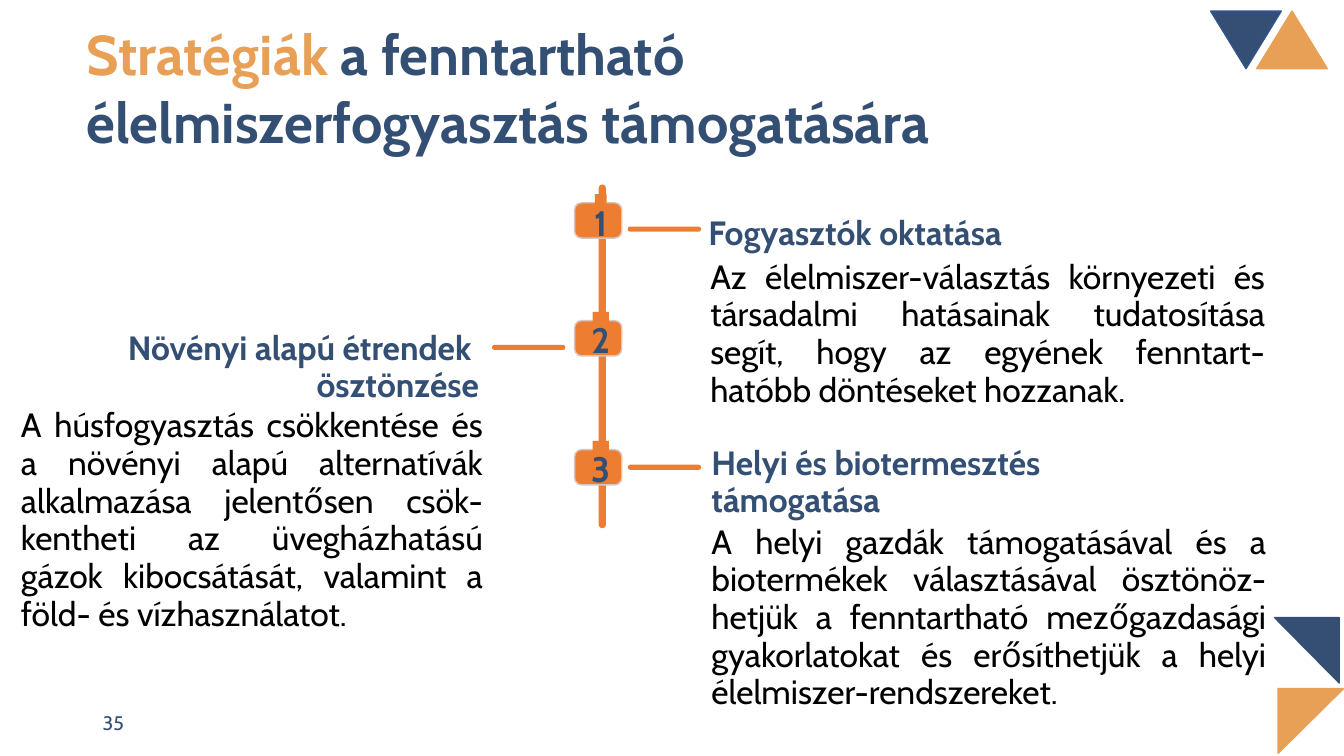
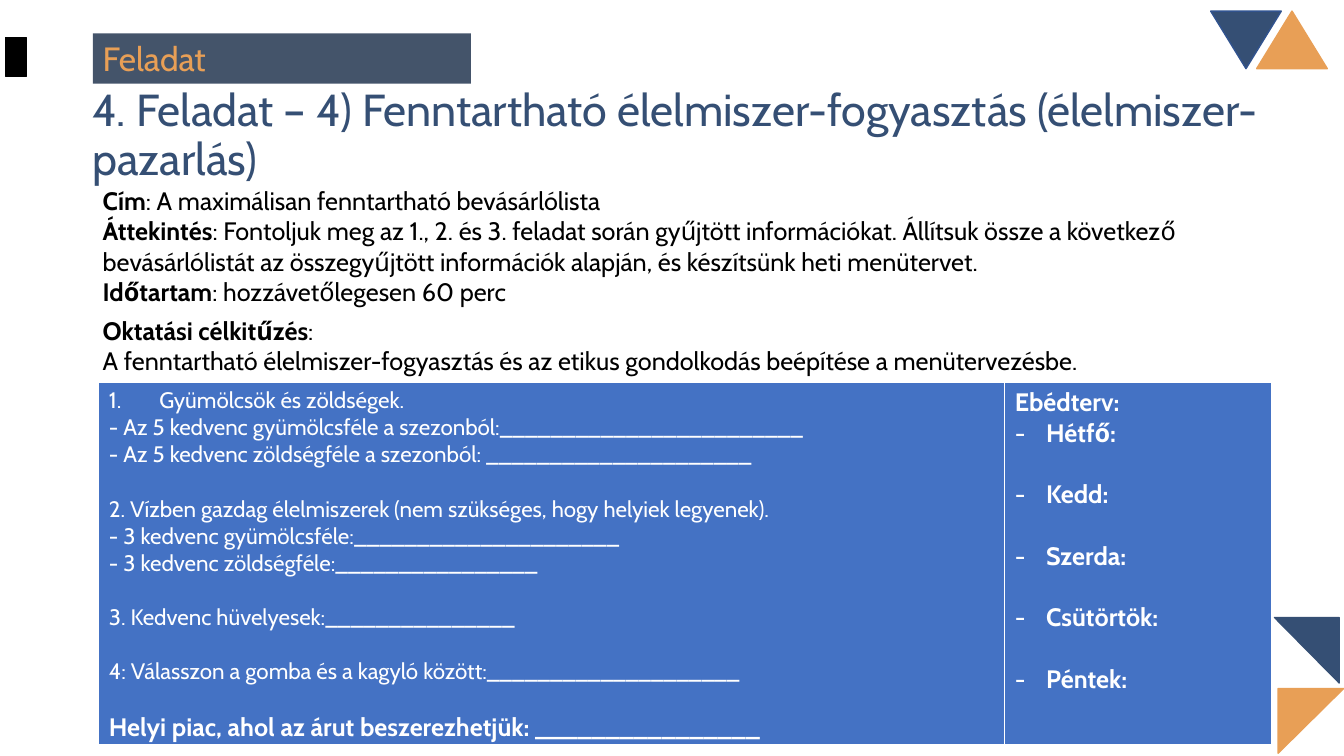
from dataclasses import dataclass

from lxml.etree import SubElement
from pptx import Presentation
from pptx.dml.color import RGBColor as RGB
from pptx.enum.shapes import MSO_SHAPE as Preset
from pptx.enum.text import MSO_ANCHOR as Anchor, PP_ALIGN as Align
from pptx.oxml.ns import qn
from pptx.util import Cm, Pt


@dataclass(frozen=True)
class Theme:
    font: str = "Cabin"
    navy: str = "354F74"
    ink: str = "344F74"
    edge: str = "31538F"
    amber: str = "E89F56"
    orange: str = "ED7D31"
    rim: str = "D7C5C1"
    slate: str = "44546A"
    blue: str = "4472C4"
    black: str = "000000"
    white: str = "FFFFFF"
    headline: float = 40
    task_title: float = 32
    badge: float = 25.2
    body: float = 24
    detail: float = 18
    entry: float = 16
    page: float = 14


theme = Theme()


def block(slide, preset, box, fill, line=None, width=1):
    shape = slide.shapes.add_shape(preset, *map(Cm, box))
    shape.shadow.inherit = False
    shape.fill.solid()
    shape.fill.fore_color.rgb = RGB.from_string(fill)
    if line:
        shape.line.color.rgb = RGB.from_string(line)
        shape.line.width = Pt(width)
    else:
        shape.line.fill.background()
    return shape


def write(frame, paragraphs, size, color, align=Align.LEFT, pitch=None,
          wrap=True, anchor=Anchor.TOP):
    frame.word_wrap = wrap
    frame.vertical_anchor = anchor
    for index, runs in enumerate(paragraphs):
        paragraph = frame.add_paragraph() if index else frame.paragraphs[0]
        paragraph.alignment = align
        paragraph.line_spacing = pitch
        for text, bold, *accent in runs:
            run = paragraph.add_run()
            run.text = text
            run.font.name = theme.font
            run.font.size = Pt(size)
            run.font.bold = bold
            run.font.color.rgb = RGB.from_string(accent[0] if accent else color)


deck = Presentation()
deck.slide_width, deck.slide_height = Cm(33.87), Cm(19.05)
blank = deck.slide_layouts[6]
strategies = deck.slides.add_slide(blank)
task = deck.slides.add_slide(blank)

corner_triangles = [
    ((31.67, 0.28, 1.78, 1.45), 0, 0.5, theme.amber, theme.amber),
    ((32.21, 17.35, 1.65, 1.63), 180, 1, theme.amber, theme.amber),
    ((32.11, 15.57, 1.65, 1.63), 270, 1, theme.navy, theme.navy),
    ((30.51, 0.28, 1.78, 1.45), 180, 0.5, theme.navy, theme.edge),
]
for slide in (strategies, task):
    for box, turn, apex, fill, line in corner_triangles:
        triangle = block(slide, Preset.ISOSCELES_TRIANGLE, box, fill, line)
        triangle.rotation = turn
        triangle.adjustments[0] = apex

page = strategies.shapes.add_textbox(Cm(2.34), Cm(17.7), Cm(7.62), Cm(1.02))
write(page.text_frame, [[("35", False)]], theme.page, theme.navy,
      anchor=Anchor.MIDDLE)

headline = strategies.shapes.add_textbox(Cm(1.93), Cm(0.38), Cm(27.23), Cm(2.46))
write(headline.text_frame, [[
    ("Stratégiák ", True, theme.amber),
    ("a fenntartható élelmiszerfogyasztás támogatására", True),
]], theme.headline, theme.ink)

spine = block(strategies, Preset.ROUNDED_RECTANGLE, (15.09, 4.65, 0.18, 8.66),
              theme.orange)
spine.adjustments[0] = 0.5

milestones = [
    (5.11, 0.3, (15.82, 5.71),
     ["Fogyasztók oktatása"], (17.6, 5.31, 10.13, 1.04), Align.LEFT, False,
     "Az élelmiszer-választás környezeti és társadalmi hatásainak tudatosítása "
     "segít, hogy az egyének fenntart-hatóbb döntéseket hozzanak.",
     (17.65, 6.38, 14.48, 2.51)),
    (8.08, 0.41, (12.4, 8.69),
     ["Növényi alapú étrendek ", "ösztönzése"], (2.69, 8.2, 9.63, 1.32),
     Align.RIGHT, False,
     "A húsfogyasztás csökkentése és a növényi alapú alternatívák alkalmazása "
     "jelentősen csök-kentheti az üvegházhatású gázok kibocsátását, valamint a "
     "föld- és vízhasználatot.",
     (0.28, 10.13, 12.14, 3.15)),
    (11.33, 0.41, (15.82, 11.71),
     ["Helyi és biotermesztés támogatása"], (17.68, 11.1, 12.65, 1.24),
     Align.LEFT, True,
     "A helyi gazdák támogatásával és a biotermékek választásával ösztönöz-hetjük "
     "a fenntartható mezőgazdasági gyakorlatokat és erősíthetjük a helyi "
     "élelmiszer-rendszereket.",
     (17.68, 13.06, 14.48, 3.15)),
]
for number, (top, digit_width, branch_start, heading, heading_box, side, wraps,
             advice, advice_box) in enumerate(milestones, 1):
    branch = block(strategies, Preset.ROUNDED_RECTANGLE,
                   (*branch_start, 1.85, 0.13), theme.orange)
    branch.adjustments[0] = 0.5
    badge = block(strategies, Preset.ROUNDED_RECTANGLE, (14.48, top, 1.19, 0.89),
                  theme.orange, theme.rim, 1.05)
    badge.adjustments[0] = 0.2
    digit = block(strategies, Preset.RECTANGLE,
                  (15.14 - digit_width / 2, top - 0.22, digit_width, 0.74),
                  theme.orange)
    write(digit.text_frame, [[(str(number), True)]], theme.badge, theme.ink,
          Align.CENTER, Pt(31.5), False)
    strategy_name = strategies.shapes.add_textbox(*map(Cm, heading_box))
    write(strategy_name.text_frame, [[(line, True)] for line in heading],
          theme.body, theme.ink, side, Pt(26.3), wraps)
    explanation = strategies.shapes.add_textbox(*map(Cm, advice_box))
    write(explanation.text_frame, [[(advice, False)]], theme.body, theme.black,
          Align.JUSTIFY, Pt(26.9))

block(task, Preset.RECTANGLE, (0.15, 0.94, 0.51, 0.99), theme.black, theme.black, 0.75)

summary = task.shapes.add_textbox(Cm(2.34), Cm(4.55), Cm(29.72), Cm(5.08))
write(summary.text_frame, [
    [("Cím", True), (": A maximálisan fenntartható bevásárlólista", False)],
    [("Áttekintés", True),
     (": Fontoljuk meg az 1., 2. és 3. feladat során gyűjtött információkat. "
      "Állítsuk össze a következő bevásárlólistát az összegyűjtött információk "
      "alapján, és készítsünk heti menütervet.", False)],
    [("Időtartam", True), (": hozzávetőlegesen 60 perc", False)],
    [("Oktatási célkitűzés", True), (":", False)],
    [("A fenntartható élelmiszer-fogyasztás és az etikus gondolkodás beépítése a "
      "menütervezésbe.", False)],
], theme.detail, theme.black)
summary.text_frame.paragraphs[3].space_before = Pt(6)

task_title = task.shapes.add_textbox(Cm(2.08), Cm(2.11), Cm(30.48), Cm(2.67))
write(task_title.text_frame, [[
    ("4. Feladat – 4) Fenntartható élelmiszer-fogyasztás (élelmiszer-pazarlás)", False),
]], theme.task_title, theme.navy, pitch=0.9, anchor=Anchor.BOTTOM)

label = block(task, Preset.RECTANGLE, (2.34, 0.84, 9.53, 1.27), theme.slate)
write(label.text_frame, [[("Feladat", False)]], theme.body, theme.amber)

planner = task.shapes.add_table(
    1, 2, Cm(2.49), Cm(9.63), Cm(29.56), Cm(9.09)).table
planner.first_row = planner.horz_banding = False
planner.columns[0].width, planner.columns[1].width = Cm(22.83), Cm(6.73)
shopping, lunches = planner.cell(0, 0), planner.cell(0, 1)
for cell in (shopping, lunches):
    properties = cell._tc.get_or_add_tcPr()
    for side, weight in [("L", 1), ("R", 1), ("T", 1), ("B", 3)]:
        border = SubElement(properties, qn(f"a:ln{side}"), w=str(Pt(weight)))
        paint = SubElement(border, qn("a:solidFill"))
        SubElement(paint, qn("a:srgbClr"), val=theme.white)
    cell.fill.solid()
    cell.fill.fore_color.rgb = RGB.from_string(theme.blue)

shopping_groups = [
    ["Gyümölcsök és zöldségek.",
     "- Az 5 kedvenc gyümölcsféle a szezonból:" + "_" * 24,
     "- Az 5 kedvenc zöldségféle a szezonból: " + "_" * 21],
    ["2. Vízben gazdag élelmiszerek (nem szükséges, hogy helyiek legyenek).",
     "- 3 kedvenc gyümölcsféle:" + "_" * 21,
     "- 3 kedvenc zöldségféle:" + "_" * 16],
    ["3. Kedvenc hüvelyesek:" + "_" * 15],
    ["4: Válasszon a gomba és a kagyló között:" + "_" * 20],
    ["Helyi piac, ahol az árut beszerezhetjük: " + "_" * 16],
]
write(shopping.text_frame,
      [[(line, False)] for group in shopping_groups for line in group],
      theme.entry, theme.white)
entries = shopping.text_frame.paragraphs
group_start = 0
for group in shopping_groups[:-1]:
    group_start += len(group)
    entries[group_start].space_before = Pt(19.4)
market = entries[-1].runs[0].font
market.size, market.bold = Pt(theme.detail), True

days = ["Hétfő:", "Kedd:", "Szerda:", "Csütörtök:", "Péntek:"]
write(lunches.text_frame, [[(line, True)] for line in ["Ebédterv:", *days]],
      theme.detail, theme.white)
day_lines = lunches.text_frame.paragraphs[1:]

bulleted = [(entries[0], 1.27, "a:buAutoNum", {"type": "arabicPeriod"})]
bulleted += [(day, 0.79, "a:buChar", {"char": "-"}) for day in day_lines]
for paragraph, indent, marker, attributes in bulleted:
    layout = paragraph._p.get_or_add_pPr()
    layout.set("marL", str(Cm(indent)))
    layout.set("indent", str(-Cm(indent)))
    SubElement(layout, qn("a:buFont"), typeface=theme.font)
    SubElement(layout, qn(marker), attributes)
for day in day_lines[1:]:
    day.space_before = Pt(21.9)

deck.save("out.pptx")
